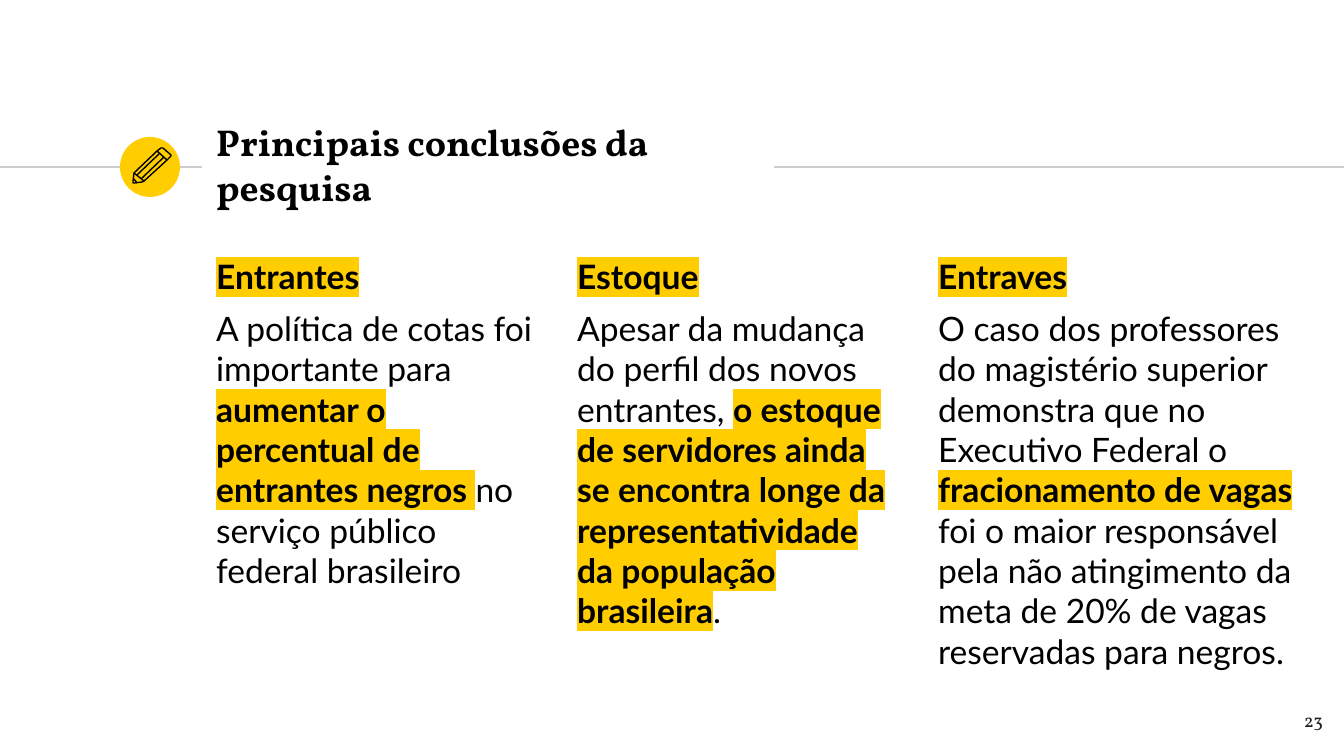
from lxml import etree
from pptx import Presentation
from pptx.dml.color import RGBColor
from pptx.enum.shapes import MSO_CONNECTOR, MSO_SHAPE
from pptx.enum.text import MSO_ANCHOR, PP_ALIGN
from pptx.oxml.ns import qn
from pptx.util import Pt

PX = 914400 / 134.4
STRAIGHT = MSO_CONNECTOR.STRAIGHT
OVAL = MSO_SHAPE.OVAL
TOP, MIDDLE = MSO_ANCHOR.TOP, MSO_ANCHOR.MIDDLE
LEFT, RIGHT = PP_ALIGN.LEFT, PP_ALIGN.RIGHT

BLACK = RGBColor(0x00, 0x00, 0x00)
INK = RGBColor(0x1D, 0x1D, 0x1B)
GRAY = RGBColor(0xCC, 0xCC, 0xCC)
YELLOW = RGBColor(0xFF, 0xCD, 0x00)
SERIF, SANS = "Vollkorn", "Lato"

PENCIL = [
    ([(51, 18), (43, 11), (41, 11), (37, 14), (47, 23), (51, 19)], True),
    ([(44, 20), (21, 42)], False),
    ([(37, 14), (14, 36), (13, 44), (13, 46), (14, 46), (22, 45), (24, 44), (47, 23)], False),
    ([(17, 38), (40, 16)], False),
    ([(17, 46), (14, 42)], False),
    ([(14, 36), (24, 44)], False),
]

COLUMNS = [
    (343, "Entrantes", [
        ("A política de cotas foi importante para ", False),
        ("aumentar o percentual de entrantes negros ", True),
        ("no serviço público federal brasileiro", False)]),
    (343, "Estoque", [
        ("Apesar da mudança do perfil dos novos entrantes, ", False),
        ("o estoque de servidores ainda se encontra longe da "
         "representatividade da população brasileira", True),
        (".", False)]),
    (383, "Entraves", [
        ("O caso dos professores do magistério superior demonstra que no Executivo Federal o ", False),
        ("fracionamento de vagas ", True),
        ("foi o maior responsável pela não atingimento da meta de 20% de vagas "
         "reservadas para negros.", False)]),
]


def px(n):
    """Turn px into EMU."""
    return round(n * PX)


def add_box(s, x, y, w, h, anchor=TOP):
    """Add a wrapping text box and return its text frame."""
    tf = s.shapes.add_textbox(px(x), px(y), px(w), px(h)).text_frame
    tf.word_wrap = True
    tf.vertical_anchor = anchor
    tf.margin_left = tf.margin_right = tf.margin_top = tf.margin_bottom = Pt(7.2)
    return tf


def add_run(p, text, font, size, color, bold=False, highlight=None):
    """Add a styled run, with an optional highlight colour."""
    r = p.add_run()
    r.text = text
    r.font.size = Pt(size)
    r.font.bold = bold
    r.font.color.rgb = color
    r.font.name = font
    if highlight is not None:
        mark = etree.Element(qn("a:highlight"))
        etree.SubElement(mark, qn("a:srgbClr")).set("val", str(highlight))
        r._r.get_or_add_rPr().find(qn("a:solidFill")).addnext(mark)


def add_rule(s, x1, x2, y):
    """Add a thin horizontal rule."""
    rule = s.shapes.add_connector(STRAIGHT, px(x1), px(y), px(x2), px(y))
    rule.line.color.rgb = GRAY
    rule.line.width = Pt(0.75)
    etree.SubElement(rule._element.spPr, qn("a:effectLst"))


def add_badge(s, x, y, size):
    """Add the yellow disc of the badge."""
    disc = s.shapes.add_shape(OVAL, px(x), px(y), px(size), px(size))
    disc.shadow.inherit = False
    disc.fill.solid()
    disc.fill.fore_color.rgb = YELLOW
    disc.line.fill.background()


def add_pencil(s, x, y):
    """Add the outlined pencil as a group placed from the badge corner."""
    group = s.shapes.add_group_shape()
    for points, closed in PENCIL:
        (x0, y0), *rest = [(x + dx, y + dy) for dx, dy in points]
        builder = group.shapes.build_freeform(x0, y0, scale=PX)
        builder.add_line_segments(rest, close=closed)
        stroke = builder.convert_to_shape()
        stroke.shadow.inherit = False
        stroke.fill.background()
        stroke.line.color.rgb = BLACK
        stroke.line.width = Pt(0.75)


def add_header(s, x, y, w, h):
    """Add the rules, the badge and the title around the title box."""
    rule_y = y + 35
    add_rule(s, 0, x - 1, rule_y)
    add_badge(s, x - 83, y + 5, 60)
    add_rule(s, x + w + 1, 1344, rule_y)
    tf = add_box(s, x, y, w, h, MIDDLE)
    add_run(tf.paragraphs[0], "Principais conclusões da pesquisa", SERIF, 20, BLACK, True)
    add_pencil(s, x - 83, y + 5)


def add_column(s, x, y, w, h, heading, parts):
    """Add a column with a highlighted heading and a body of mixed runs."""
    tf = add_box(s, x, y, w, h)
    for p, runs in ((tf.paragraphs[0], [(heading, True)]), (tf.add_paragraph(), parts)):
        p.alignment = LEFT
        p.space_before = Pt(6)
        for text, strong in runs:
            add_run(p, text, SANS, 18, BLACK, strong, YELLOW if strong else None)


def add_page_number(s, x, y, w, h):
    """Add the right-aligned page number."""
    p = add_box(s, x, y, w, h).paragraphs[0]
    p.alignment = RIGHT
    add_run(p, "23", SERIF, 10, INK)


def main():
    """Build and save the slide."""
    prs = Presentation()
    prs.slide_width, prs.slide_height = px(1344), px(756)
    s = prs.slides.add_slide(prs.slide_layouts[6])
    add_header(s, 203, 132, 570, 64)
    for i, (w, heading, parts) in enumerate(COLUMNS):
        add_column(s, 203 + 361 * i, 243, w, 458, heading, parts)
    add_page_number(s, 1255, 698, 81, 58)
    prs.save("out.pptx")


if __name__ == "__main__":
    main()
